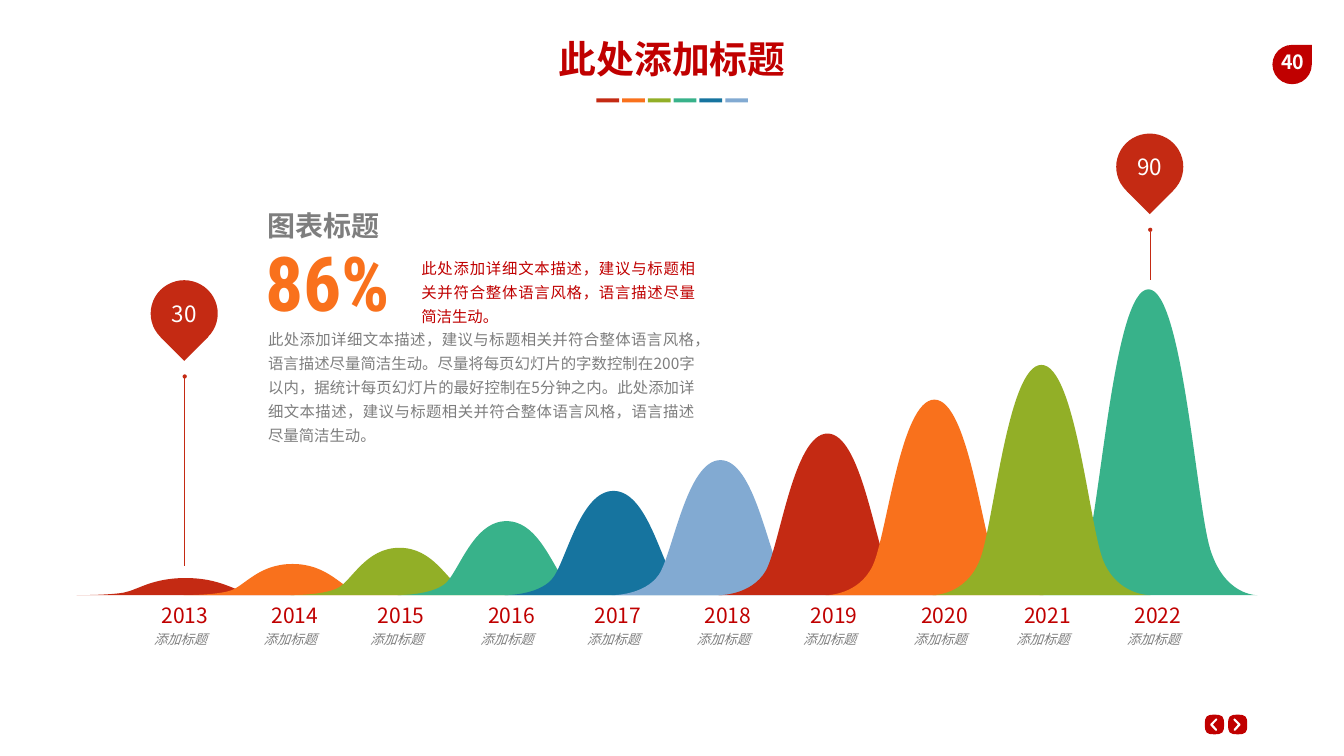
import pptx
import pptx.dml.color
import pptx.enum.shapes
import pptx.enum.text
import pptx.oxml.ns
import pptx.util
from lxml import etree

Pt = pptx.util.Pt
KIND = pptx.enum.shapes.MSO_SHAPE
ALIGN = pptx.enum.text.PP_ALIGN
FIT = pptx.enum.text.MSO_AUTO_SIZE
MID = pptx.enum.text.MSO_ANCHOR.MIDDLE
qn = pptx.oxml.ns.qn

CJK = "Noto Sans CJK SC"
RED, DARK, ORANGE, GREEN = "C42A13", "C00000", "F9711C", "92AF27"
TEAL, BLUE, SKY, GREY, WHITE = "38B28A", "16749F", "82AAD2", "7E7E7E", "FFFFFF"
HUES = [RED, ORANGE, GREEN, TEAL, BLUE, SKY]

BASE = 850.3
STEP = 152.8
PEAKS = [24.5, 44.6, 67.7, 105.8, 149, 193, 231, 279.4, 329, 437]
YEARS = [263.9, 420.8, 572.8, 730.4, 882.4, 1039.3, 1191.2, 1348.9, 1495.8, 1653.5]

# Left half of a bell: x in points from its middle, y as a share of its peak
RISE = [(-155.5, 0), (-153.5, 0), (-108.5, 0), (-88.3, 0.15),
        (-68.2, 0.3), (-48.5, 1), (0, 1)]
ARROW = [(4.3, 6.5), (4.3, 8.6), (2.2, 8.6), (-5, 1), (-5, -0.7), (2.2, -7.9),
         (3.6, -8.6), (5, -7.2), (4.3, -5.8), (-1.4, 0)]

BRIEF = "此处添加详细文本描述，建议与标题相关并符合整体语言风格，语言描述尽量简洁生动。"
BODY = BRIEF + "尽量将每页幻灯片的字数控制在200字以内，据统计每页幻灯片的最好控制在5分钟之内。" + BRIEF


def tint(hue):
    return pptx.dml.color.RGBColor.from_string(hue)


def paint(shape, hue):
    shape.shadow.inherit = False
    shape.fill.solid()
    shape.fill.fore_color.rgb = tint(hue)
    shape.line.fill.background()
    return shape


def block(slide, kind, left, top, wide, high, hue):
    return paint(slide.shapes.add_shape(kind, Pt(left), Pt(top), Pt(wide), Pt(high)), hue)


def outline(slide, dots, hue):
    # Hundredths of a point keep small shapes exact
    dots = [(x * 100, y * 100) for x, y in dots]
    pen = slide.shapes.build_freeform(*dots[0], scale=Pt(1) / 100)
    pen.add_line_segments(dots[1:], close=True)
    return paint(pen.convert_to_shape(), hue)


def curve(slide, knots, hue):
    """Outline whose knots, three by three, steer cubic curves."""
    shape = outline(slide, knots, hue)
    legs = list(shape._element.iter(qn("a:lnTo")))
    for i in range(0, len(legs), 3):
        bend = etree.Element(qn("a:cubicBezTo"))
        legs[i].addprevious(bend)
        for leg in legs[i:i + 3]:
            bend.append(leg[0])
            leg.getparent().remove(leg)


def write(frame, words, hue, fmt, para=None):
    line = frame.paragraphs[0]
    for key, val in (para or {}).items():
        setattr(line, key, val)
    run = line.add_run()
    run.text = words
    for key, val in {"name": CJK, **fmt}.items():
        setattr(run.font, key, val)
    run.font.color.rgb = tint(hue)
    face = etree.SubElement(run.font._element, qn("a:ea"))
    face.set("typeface", run.font.name)


def label(slide, words, spot, hue, fmt, para=None, wrap=False, pad=None):
    frame = slide.shapes.add_textbox(*map(Pt, spot)).text_frame
    look = {"word_wrap": wrap, "auto_size": FIT.SHAPE_TO_FIT_TEXT}
    if pad:
        look.update(margin_left=Pt(pad), margin_right=Pt(pad),
                    margin_top=Pt(pad / 2), margin_bottom=Pt(pad / 2))
    for key, val in look.items():
        setattr(frame, key, val)
    write(frame, words, hue, fmt, para)


def bell(slide, i):
    mid = 265 + STEP * i
    knots = RISE + [(-x, y) for x, y in RISE[-2::-1]]
    curve(slide, [(mid + x, BASE - y * PEAKS[i]) for x, y in knots], (HUES + HUES[:4])[i])


def pin(slide, mid, top, foot, words):
    disc = block(slide, KIND.OVAL, mid - 47.9, top, 95.8, 95, RED)
    look = {"vertical_anchor": MID, "margin_left": 0, "margin_right": 0,
            "margin_top": 0, "margin_bottom": 0}
    for key, val in look.items():
        setattr(disc.text_frame, key, val)
    write(disc.text_frame, words, WHITE, {"size": Pt(32)}, {"alignment": ALIGN.CENTER})
    outline(slide, [(mid - 33.8, top + 81.4), (mid + 33.8, top + 81.4),
                    (mid, top + 115.2)], RED)
    # Stem with a round end at the top
    stem = slide.shapes.add_connector(pptx.enum.shapes.MSO_CONNECTOR.STRAIGHT,
                                      Pt(mid + 0.7), Pt(top + 137.5), Pt(mid + 0.7), Pt(foot))
    stem.line.width = Pt(1)
    stem.line.color.rgb = tint(RED)
    etree.SubElement(stem.line._get_or_add_ln(), qn("a:headEnd")).set("type", "oval")
    etree.SubElement(stem._element.spPr, qn("a:effectLst"))


def button(slide, mid, way):
    row, w, h = 1035, 13.7, 14
    unit = [(0, -1), (-0.84, -1), (-1, -0.84), (-1, 0), (-1, 0.84), (-0.84, 1), (0, 1),
            (0.84, 1), (1, 0.84), (1, 0), (1, -0.84), (0.84, -1), (0, -1)]
    curve(slide, [(mid + x * w, row + y * h) for x, y in unit], DARK)
    outline(slide, [(mid - 1 + way * x, row + y) for x, y in ARROW], WHITE)


def main():
    deck = pptx.Presentation()
    deck.slide_width, deck.slide_height = Pt(1919.52), Pt(1080)
    slide = deck.slides.add_slide(deck.slide_layouts[6])
    mid = {"alignment": ALIGN.CENTER}

    # Page buttons and number
    button(slide, 1734.5, 1)
    button(slide, 1767.6, -1)
    block(slide, KIND.TEAR, 1817.3, 64.1, 56.2, 56.2, DARK)
    label(slide, "40", (1811.5, 64.8, 69.8, 48.2), WHITE,
          {"size": Pt(28), "bold": True}, mid, pad=14.4)

    # Bells, the last one at the back
    for i in [9, *range(9)]:
        bell(slide, i)

    # Years and captions
    for i, x in enumerate(YEARS):
        label(slide, str(2013 + i), (x - 42.8, 857.2, 85.7, 43.9), DARK, {"size": Pt(30)}, mid)
        label(slide, "添加标题", (x - 52, 897.8, 91.4, 30.2), GREY,
              {"size": Pt(19), "italic": True}, mid)

    # Value pins
    pin(slide, 263.1, 400.3, 808.6, "30")
    pin(slide, 1642.1, 190.8, 400.3, "90")

    # Chart heading and text
    prose = {"alignment": ALIGN.JUSTIFY, "line_spacing": 1.3}
    label(slide, BODY, (375.8, 460.1, 623.5, 180.7), GREY, {"size": Pt(22)}, prose, True)
    label(slide, "图表标题", (375.1, 294.5, 176.4, 55.4), GREY, {"size": Pt(40), "bold": True})
    label(slide, BRIEF, (594.7, 359.3, 405.4, 110.9), DARK, {"size": Pt(22)}, prose, True)
    label(slide, "86%", (371.5, 334.1, 258.5, 138.2), ORANGE,
          {"size": Pt(108), "bold": True, "name": "Roboto Condensed"}, wrap=True)

    # Title with its colour bar
    label(slide, "此处添加标题", (719.3, 46.8, 481, 72.7), DARK,
          {"size": Pt(54), "bold": True}, mid, True)
    for i, hue in enumerate(HUES):
        block(slide, KIND.RECTANGLE, 851.8 + 36.8 * i, 140.4, 32.4, 5.8, hue)

    deck.save("out.pptx")


if __name__ == "__main__":
    main()
